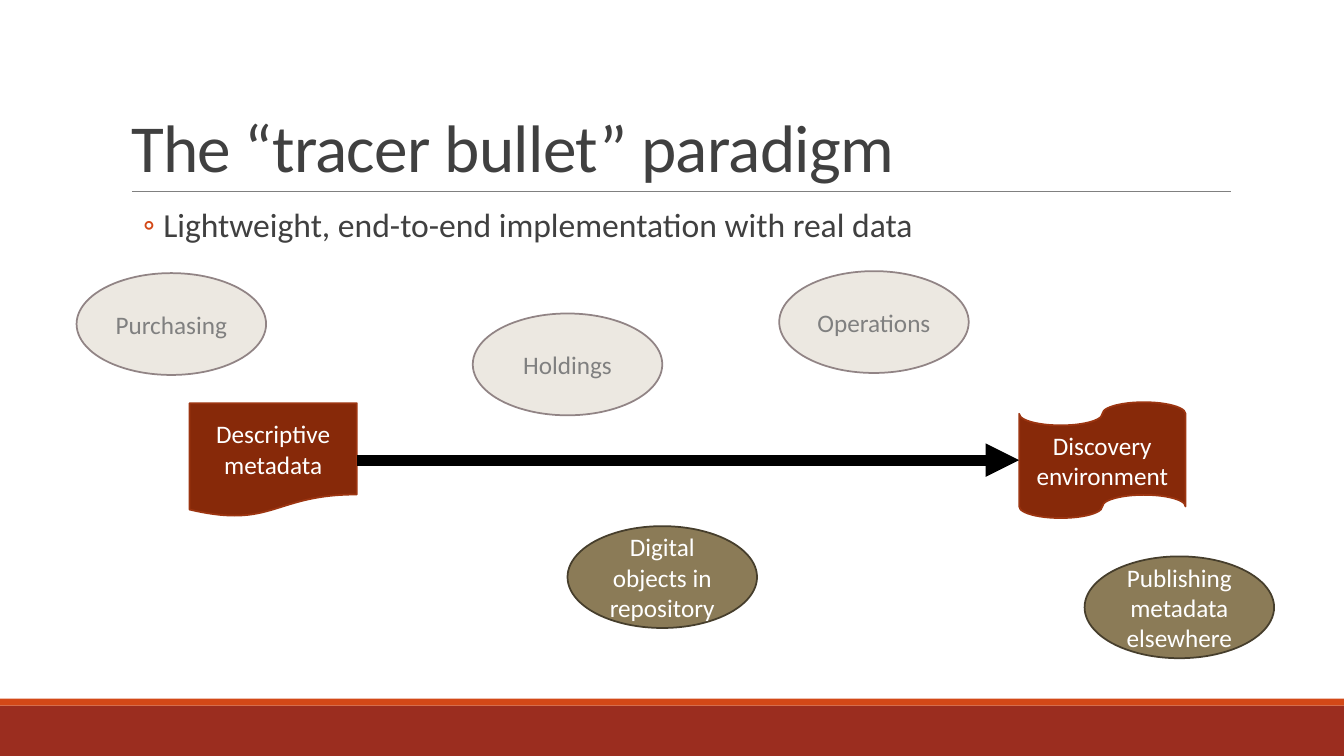
import dataclasses

import lxml.etree
import pptx
import pptx.dml.color
import pptx.enum.shapes
import pptx.enum.text
import pptx.oxml.ns
import pptx.shapes.autoshape
import pptx.shapes.connector
import pptx.text.text
import pptx.util

Preset = pptx.enum.shapes.MSO_SHAPE
Align = pptx.enum.text.PP_ALIGN
Anchor = pptx.enum.text.MSO_ANCHOR
qn = pptx.oxml.ns.qn

FONT = "Calibri"
INK, RUST, ORANGE = "404040", "9B2D1F", "D34817"
LEFT_SITE, RIGHT_SITE = 1, 3

presentation = pptx.Presentation()
presentation.slide_width = pptx.util.Inches(13.33)
presentation.slide_height = pptx.util.Inches(7.5)
slide = presentation.slides.add_slide(presentation.slide_layouts[1])


@dataclasses.dataclass(frozen=True)
class Box:
    """A rectangle in percent of the slide's width and height."""
    left: float
    top: float
    width: float
    height: float


@dataclasses.dataclass(frozen=True)
class Look:
    fill: str
    line: str | None = None
    text: str = "FFFFFF"


@dataclasses.dataclass(frozen=True)
class Stage:
    label: str
    preset: Preset
    box: Box
    look: Look


def across(share: float) -> pptx.util.Emu:
    return pptx.util.Emu(round(presentation.slide_width * share / 100))


def down(share: float) -> pptx.util.Emu:
    return pptx.util.Emu(round(presentation.slide_height * share / 100))


def edges(box: Box) -> tuple[pptx.util.Emu, ...]:
    return across(box.left), down(box.top), across(box.width), down(box.height)


def rgb(value: str) -> pptx.dml.color.RGBColor:
    return pptx.dml.color.RGBColor.from_string(value)


def write(frame: pptx.text.text.TextFrame, text: str, *, size: float, color: str,
          align: Align = Align.LEFT, anchor: Anchor = Anchor.TOP,
          line_spacing: float = 1, before: float = 0, after: float = 0,
          level: int = 0, tracking: int = 0) -> pptx.text.text._Paragraph:
    frame.word_wrap = True
    frame.auto_size = pptx.enum.text.MSO_AUTO_SIZE.NONE
    frame.vertical_anchor = anchor
    paragraph = frame.paragraphs[0]
    paragraph.alignment, paragraph.level = align, level
    paragraph.line_spacing = line_spacing
    paragraph.space_before = pptx.util.Pt(before)
    paragraph.space_after = pptx.util.Pt(after)
    run = paragraph.add_run()
    run.text = text
    run.font.name, run.font.size = FONT, pptx.util.Pt(size)
    run.font.color.rgb = rgb(color)
    if tracking:
        run.font._element.set("spc", str(tracking))
    return paragraph


def add_bullet(paragraph: pptx.text.text._Paragraph, mark: str, color: str) -> None:
    properties = paragraph._p.get_or_add_pPr()
    properties.set("marL", str(pptx.util.Inches(0.42)))
    properties.set("indent", str(pptx.util.Inches(-0.2)))
    bullet_color = lxml.etree.SubElement(properties, qn("a:buClr"))
    lxml.etree.SubElement(bullet_color, qn("a:srgbClr"), val=color)
    lxml.etree.SubElement(properties, qn("a:buFont"), typeface=FONT)
    lxml.etree.SubElement(properties, qn("a:buChar"), char=mark)


def add_block(preset: Preset, box: Box, look: Look) -> pptx.shapes.autoshape.Shape:
    block = slide.shapes.add_shape(preset, *edges(box))
    block.shadow.inherit = False
    block.fill.solid()
    block.fill.fore_color.rgb = rgb(look.fill)
    if look.line:
        block.line.color.rgb = rgb(look.line)
        block.line.width = pptx.util.Pt(1.25)
    else:
        block.line.fill.background()
    return block


def add_stage(stage: Stage) -> pptx.shapes.autoshape.Shape:
    block = add_block(stage.preset, stage.box, stage.look)
    write(block.text_frame, stage.label, size=18, color=stage.look.text,
          align=Align.CENTER, anchor=Anchor.MIDDLE)
    return block


def add_line(start: tuple[float, float], end: tuple[float, float], color: str,
             width: float) -> pptx.shapes.connector.Connector:
    line = slide.shapes.add_connector(
        pptx.enum.shapes.MSO_CONNECTOR.STRAIGHT,
        across(start[0]), down(start[1]), across(end[0]), down(end[1]))
    line.line.color.rgb = rgb(color)
    line.line.width = pptx.util.Pt(width)
    lxml.etree.SubElement(line._element.spPr, qn("a:effectLst"))
    return line


# Footer bands and the rule under the title
add_block(Preset.RECTANGLE, Box(0, 93.33, 100, 6.67), Look(RUST))
add_block(Preset.RECTANGLE, Box(0, 92.4, 100, 0.93), Look(ORANGE))
add_line((9.82, 25.33), (91.58, 25.33), "808080", 0.5)

# Title and bullet
title = slide.shapes.title
title.left, title.top, title.width, title.height = edges(Box(9, 4.13, 82.5, 21.2))
write(title.text_frame, "The “tracer bullet” paradigm", size=48, color=INK,
      anchor=Anchor.BOTTOM, line_spacing=0.85, tracking=-50)

summary = slide.placeholders[1]
summary.left, summary.top, summary.width, summary.height = edges(Box(9, 26.93, 82.5, 58.67))
summary.text_frame.margin_left = summary.text_frame.margin_right = 0
add_bullet(
    write(summary.text_frame, "Lightweight, end-to-end implementation with real data",
          size=24, color=INK, line_spacing=0.9, before=2, after=4, level=1),
    "◦", ORANGE)

# The two ends of the path and the arrow that joins them
END_LOOK = Look("872909", "9C3511")
metadata = add_stage(Stage("Descriptive metadata", Preset.FLOWCHART_DOCUMENT,
                           Box(14.1, 53.33, 12.45, 15.07), END_LOOK))
discovery = add_stage(Stage("Discovery environment", Preset.FLOWCHART_PUNCHED_TAPE,
                            Box(75.83, 53.2, 12.38, 15.33), END_LOOK))
tracer = add_line((26.55, 60.87), (75.83, 60.87), "000000", 8)
tracer.begin_connect(metadata, RIGHT_SITE)
tracer.end_connect(discovery, LEFT_SITE)
lxml.etree.SubElement(tracer.line._get_or_add_ln(), qn("a:tailEnd"), type="triangle")

# Areas around the path: faded ones wait, olive ones come next
FADED = Look("ECE8E1", "918485", "808080")
OLIVE = Look("8B7B57", "463E2C")
for label, left, top, look in (
    ("Holdings", 35.18, 41.47, FADED),
    ("Operations", 57.98, 35.87, FADED),
    ("Publishing metadata elsewhere", 80.7, 73.6, OLIVE),
    ("Digital objects in repository", 42.23, 69.6, OLIVE),
    ("Purchasing", 5.7, 36.13, FADED),
):
    add_stage(Stage(label, Preset.OVAL, Box(left, top, 14.1, 13.47), look))

presentation.save("out.pptx")
